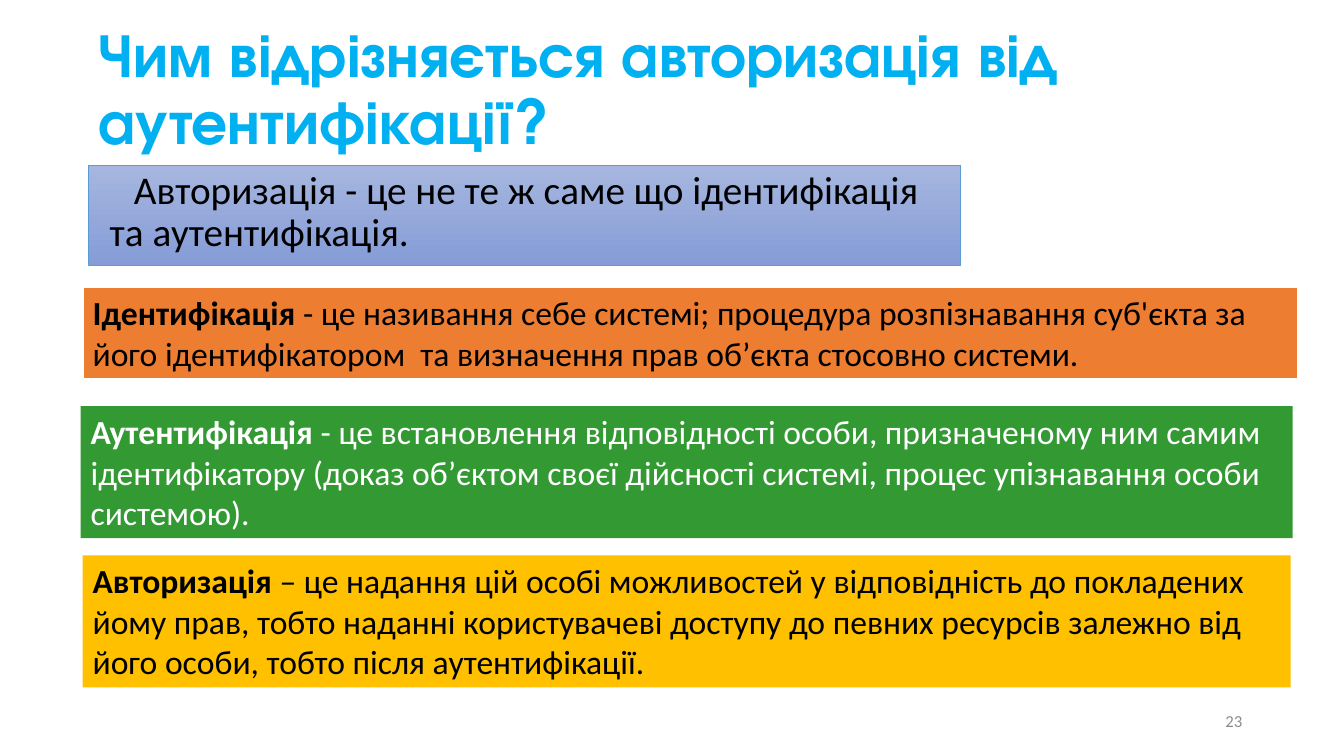
from dataclasses import dataclass

from pptx import Presentation
from pptx import util as u
from pptx.dml.color import RGBColor
from pptx.enum import shapes, text

PX = 9144


@dataclass(frozen=True)
class Theme:
    title_font: str = "TeX Gyre Adventor"
    body_font: str = "Calibri"
    title_size: int = 44
    lead_size: int = 28
    body_size: int = 24
    number_size: int = 12
    title: str = "00B0F0"
    black: str = "000000"
    white: str = "FFFFFF"
    grey: str = "8C8C8C"
    lead_top: str = "A6B6DE"
    lead_bottom: str = "859CD7"
    lead_line: str = "5B9BD5"
    orange: str = "ED7D31"
    green: str = "339933"
    amber: str = "FFC000"


T = Theme()


def rgb(value):
    return RGBColor.from_string(value)


def write(sp, *runs, size, color, font=T.body_font, bold=False, spacing=None,
          align=text.PP_ALIGN.LEFT, anchor=text.MSO_ANCHOR.TOP,
          fit=text.MSO_AUTO_SIZE.NONE, left=0, indent=0):
    tf = sp.text_frame
    tf.word_wrap = True
    tf.auto_size = fit
    tf.vertical_anchor = anchor
    p = tf.paragraphs[0]
    p.alignment = align
    p.line_spacing = spacing
    pr = p._p.get_or_add_pPr()
    pr.set("marL", str(left * PX))
    pr.set("indent", str(indent * PX))
    for i, words in enumerate(runs):
        r = p.add_run()
        r.text = words
        r.font.name = font
        r.font.size = u.Pt(size)
        r.font.bold = bold and i == 0
        r.font.color.rgb = rgb(color)


def add_box(s, box):
    sp = s.shapes.add_shape(shapes.MSO_SHAPE.RECTANGLE, *(n * PX for n in box))
    sp.shadow.inherit = False
    return sp


def add_title(s, box, words):
    sp = s.shapes.add_textbox(*(n * PX for n in box))
    write(sp, words, size=T.title_size, color=T.title, font=T.title_font,
          bold=True, spacing=0.9, anchor=text.MSO_ANCHOR.MIDDLE)


def add_lead(s, box, words):
    sp = add_box(s, box)
    sp.fill.gradient()
    sp.fill.gradient_angle = 270
    for stop, color in zip(sp.fill.gradient_stops, (T.lead_top, T.lead_bottom)):
        stop.color.rgb = rgb(color)
    sp.line.color.rgb = rgb(T.lead_line)
    sp.line.width = u.Pt(0.75)
    write(sp, words, size=T.lead_size, color=T.black, spacing=0.9,
          left=11, indent=24)


def add_definition(s, box, term, meaning, fill, color=T.black, line=None):
    sp = add_box(s, box)
    sp.fill.solid()
    sp.fill.fore_color.rgb = rgb(fill)
    if line:
        sp.line.color.rgb = rgb(line)
        sp.line.width = u.Pt(1.5)
    else:
        sp.line.fill.background()
    write(sp, term, meaning, size=T.body_size, color=color, bold=True,
          fit=text.MSO_AUTO_SIZE.SHAPE_TO_FIT_TEXT)


def add_number(s, box, number):
    sp = s.shapes.add_textbox(*(n * PX for n in box))
    write(sp, number, size=T.number_size, color=T.grey,
          align=text.PP_ALIGN.RIGHT, anchor=text.MSO_ANCHOR.MIDDLE)


def main():
    prs = Presentation()
    prs.slide_width = 1333 * PX
    prs.slide_height = 750 * PX
    s = prs.slides.add_slide(prs.slide_layouts[6])
    add_title(s, (88, 36, 1149, 109),
              "Чим відрізняється авторизація від аутентифікації?")
    add_lead(s, (88, 164, 865, 99),
             "Авторизація - це не те ж саме що ідентифікація та аутентифікація.")
    add_definition(
        s, (82, 285, 1205, 91), "Ідентифікація",
        " - це називання себе системі; процедура розпізнавання суб'єкта за його "
        "ідентифікатором  та визначення прав об’єкта стосовно системи.",
        T.orange, line=T.white)
    add_definition(
        s, (80, 403, 1202, 131), "Аутентифікація",
        " - це встановлення відповідності особи, призначеному ним самим "
        "ідентифікатору (доказ об’єктом своєї дійсності системі, процес "
        "упізнавання особи системою).",
        T.green, color=T.white)
    add_definition(
        s, (82, 551, 1198, 131), "Авторизація",
        " – це надання цій особі можливостей у відповідність до покладених йому "
        "прав, тобто наданні користувачеві доступу до певних ресурсів залежно "
        "від його особи, тобто після аутентифікації.",
        T.amber)
    add_number(s, (942, 695, 300, 40), "23")
    prs.save("out.pptx")


if __name__ == "__main__":
    main()
